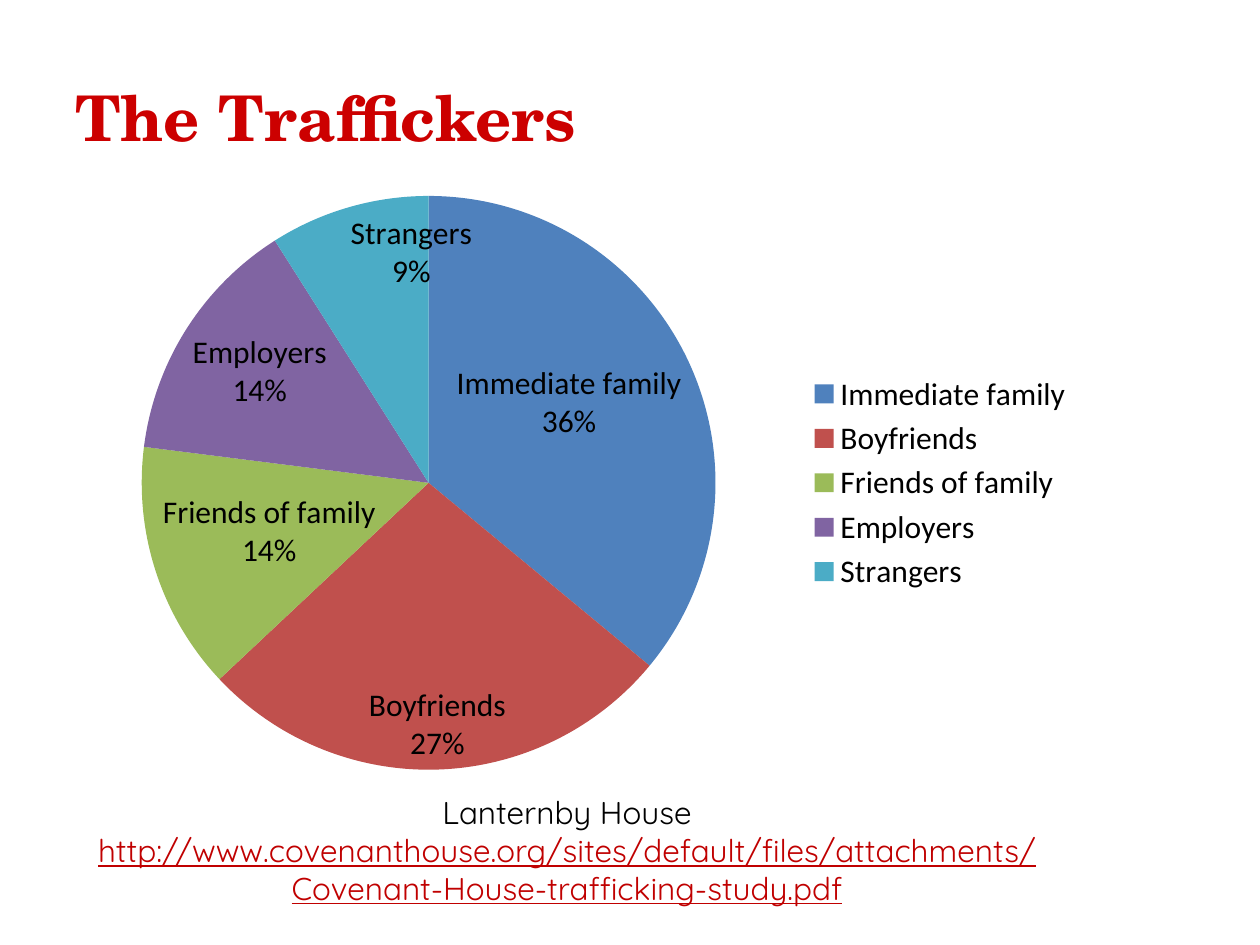
from dataclasses import dataclass

from pptx import Presentation
from pptx.chart.data import CategoryChartData
from pptx.dml.color import RGBColor
from pptx.enum.chart import XL_CHART_TYPE as ChartType
from pptx.enum.chart import XL_LABEL_POSITION as LabelPosition
from pptx.enum.chart import XL_LEGEND_POSITION as LegendPosition
from pptx.enum.text import MSO_ANCHOR as Anchor
from pptx.enum.text import PP_ALIGN as Align
from pptx.slide import Slide
from pptx.text.text import Font
from pptx.util import Inches, Pt

SLIDE_WIDTH, SLIDE_HEIGHT = Inches(10), Inches(7.5)


@dataclass(frozen=True)
class Area:
    """A box given as shares of the slide's width and height."""
    left: float
    top: float
    width: float
    height: float

    def lengths(self) -> tuple[int, int, int, int]:
        """Return left, top, width and height in slide units."""
        return (round(self.left * SLIDE_WIDTH), round(self.top * SLIDE_HEIGHT),
                round(self.width * SLIDE_WIDTH), round(self.height * SLIDE_HEIGHT))


@dataclass(frozen=True)
class Line:
    """One paragraph of text with its look."""
    text: str
    typeface: str
    size: float
    color: str
    bold: bool = False
    underline: bool = False
    align: Align = Align.LEFT


@dataclass(frozen=True)
class Slice:
    """One slice of the pie."""
    name: str
    percent: int
    color: str


SLICES = (
    Slice("Immediate family", 36, "4F81BD"),
    Slice("Boyfriends", 27, "C0504D"),
    Slice("Friends of family", 14, "9BBB59"),
    Slice("Employers", 14, "8064A2"),
    Slice("Strangers", 9, "4BACC6"),
)
TITLE = (Line("The Traffickers", "TeX Gyre Schola", 36, "CC0000", bold=True),)
SOURCE = (
    Line("Lanternby House", "Quicksand", 18, "000000", align=Align.CENTER),
    Line("http://www.covenanthouse.org/sites/default/files/attachments/"
         "Covenant-House-trafficking-study.pdf",
         "Quicksand", 18, "C00000", underline=True, align=Align.CENTER),
)


def rgb(color: str) -> RGBColor:
    """Turn a hex string into a colour."""
    return RGBColor.from_string(color)


def style_font(font: Font, typeface: str, size: float, color: str) -> None:
    """Set typeface, size and colour of a font."""
    font.name = typeface
    font.size = Pt(size)
    font.color.rgb = rgb(color)


def add_text(slide: Slide, area: Area, lines: tuple[Line, ...],
             anchor: Anchor = Anchor.TOP) -> None:
    """Add a wrapping text box with one paragraph per line."""
    frame = slide.shapes.add_textbox(*area.lengths()).text_frame
    frame.word_wrap = True
    frame.vertical_anchor = anchor
    for index, line in enumerate(lines):
        paragraph = frame.add_paragraph() if index else frame.paragraphs[0]
        paragraph.alignment = line.align
        run = paragraph.add_run()
        run.text = line.text
        style_font(run.font, line.typeface, line.size, line.color)
        run.font.bold = line.bold
        run.font.underline = line.underline


def add_pie(slide: Slide, area: Area, slices: tuple[Slice, ...]) -> None:
    """Add a pie chart with labels on the slices and a legend at the right."""
    data = CategoryChartData()
    data.categories = [part.name for part in slices]
    data.add_series("Series 1", [part.percent for part in slices])
    chart = slide.shapes.add_chart(ChartType.PIE, *area.lengths(), data).chart
    style_font(chart.font, "Calibri", 18, "000000")
    chart.has_title = False
    chart.has_legend = True
    chart.legend.position = LegendPosition.RIGHT
    chart.legend.include_in_layout = False

    plot = chart.plots[0]
    plot.vary_by_categories = True
    series = plot.series[0]
    for index, part in enumerate(slices):
        fill = series.points[index].format.fill
        fill.solid()
        fill.fore_color.rgb = rgb(part.color)

    labels = series.data_labels
    labels.show_category_name = True
    labels.show_percentage = True
    labels.show_value = False
    labels.position = LabelPosition.INSIDE_END
    style_font(labels.font, "Calibri", 18, "000000")


def main() -> None:
    """Build the slide and save it."""
    presentation = Presentation()
    presentation.slide_width, presentation.slide_height = SLIDE_WIDTH, SLIDE_HEIGHT
    slide = presentation.slides.add_slide(presentation.slide_layouts[6])
    add_text(slide, Area(0.05, 0.04, 0.82, 0.167), TITLE, Anchor.MIDDLE)
    add_pie(slide, Area(0.042, 0.189, 0.82, 0.644), SLICES)
    add_text(slide, Area(0.025, 0.833, 0.85, 0.135), SOURCE)
    presentation.save("out.pptx")


if __name__ == "__main__":
    main()
